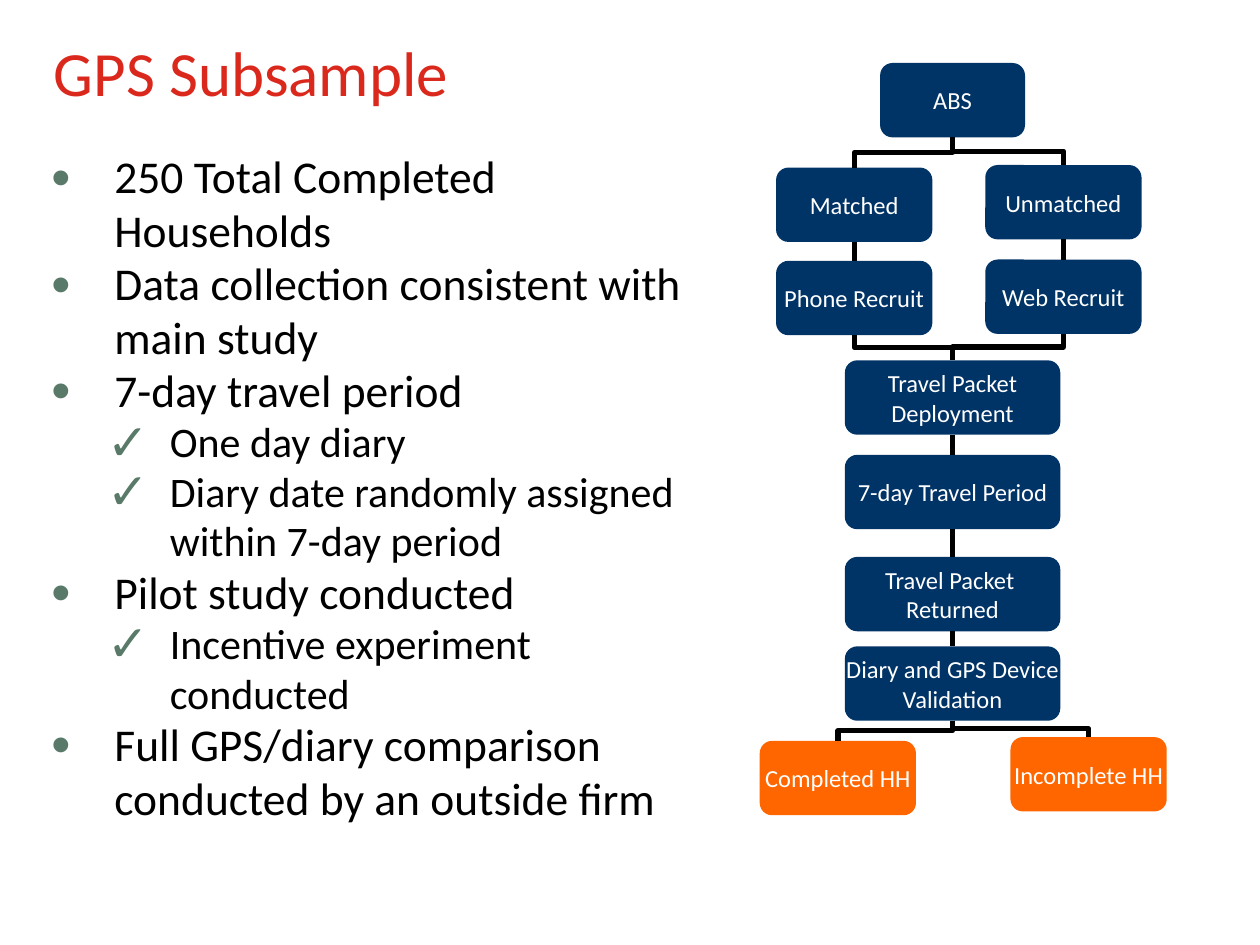
from pptx import Presentation
from pptx.dml.color import RGBColor
from pptx.enum import shapes as es, text as et
from pptx.oxml import parse_xml
from pptx.oxml.ns import nsdecls, qn
from pptx.util import Inches, Pt

NAVY, ORANGE = "003366", "FF6600"
rgb = RGBColor.from_string


def write(frame, lines, size=14, color="000000", align=et.PP_ALIGN.LEFT,
          anchor=et.MSO_ANCHOR.MIDDLE, wrap=True, bullets=None, spacing=None):
    """Fill a frame with lines; bullets gives (mark, indent, size) per line."""
    frame.word_wrap = wrap
    frame.vertical_anchor = anchor
    for i, line in enumerate(lines):
        p = frame.paragraphs[0] if i == 0 else frame.add_paragraph()
        p.alignment = align
        if spacing:
            p.line_spacing = spacing
        line_size = size
        if bullets:
            mark, indent, line_size = bullets[i]
            props = p._p.get_or_add_pPr()
            props.set("marL", str(Inches(indent)))
            props.set("indent", str(Inches(-0.5)))
            for xml in ('<a:buClr {}><a:srgbClr val="597A69"/></a:buClr>',
                        '<a:buSzPct {} val="120000"/>',
                        '<a:buFont {} typeface="Arial"/>',
                        '<a:buChar {} char="' + mark + '"/>'):
                props.append(parse_xml(xml.format(nsdecls("a"))))
        run = p.add_run()
        run.text = line
        run.font.name = "Calibri"
        run.font.size = Pt(line_size)
        run.font.color.rgb = rgb(color)


def link(slide, x1, y1, x2, y2):
    """Join two points downwards, with a vertical-first elbow if x differs."""
    if x1 == x2:
        line = slide.shapes.add_connector(
            es.MSO_CONNECTOR.STRAIGHT, *map(Inches, (x1, y1, x2, y2)))
    else:
        # An elbow starts horizontally, so it is laid out on its side and turned
        mid_x, mid_y = (x1 + x2) / 2, (y1 + y2) / 2
        half_w, half_h = (y2 - y1) / 2, abs(x2 - x1) / 2
        to_right = x2 > x1
        if to_right:
            half_w = -half_w
        line = slide.shapes.add_connector(
            es.MSO_CONNECTOR.ELBOW,
            *map(Inches, (mid_x - half_w, mid_y - half_h, mid_x + half_w, mid_y + half_h)))
        turn = 270 if to_right else 90
        line._element.spPr.find(qn("a:xfrm")).set("rot", str(turn * 60000))
    line.line.color.rgb = rgb("000000")
    line.line.width = Pt(3)
    line._element.spPr.append(parse_xml(f"<a:effectLst {nsdecls('a')}/>"))


prs = Presentation()
prs.slide_width, prs.slide_height = Inches(10), Inches(7.5)
slide = prs.slides.add_slide(prs.slide_layouts[6])

# Title
title = slide.shapes.add_textbox(Inches(0.33), Inches(0.22), Inches(9), Inches(0.7))
write(title.text_frame, ["GPS Subsample"], size=36, color="DA291C")

# Study points: level and wording
points = [
    (1, "250 Total Completed Households"),
    (1, "Data collection consistent with main study"),
    (1, "7-day travel period"),
    (2, "One day diary"),
    (2, "Diary date randomly assigned within 7-day period"),
    (1, "Pilot study conducted"),
    (2, "Incentive experiment conducted"),
    (1, "Full GPS/diary comparison conducted by an outside firm"),
]
levels = {1: ("•", 0.5, 26), 2: ("✓", 0.94, 24)}
body = slide.shapes.add_textbox(Inches(0.31), Inches(1.15), Inches(5.37), Inches(5.97))
write(body.text_frame, [wording for _, wording in points], anchor=et.MSO_ANCHOR.TOP,
      bullets=[levels[level] for level, _ in points], spacing=0.98)

# Flowchart steps: centre x, top, width, fill, lines
LEFT, MIDDLE, RIGHT = 6.78, 7.56, 8.44
STEP_H = 0.59
steps = {
    "abs": (MIDDLE, 0.5, 1.15, NAVY, ["ABS"]),
    "matched": (LEFT, 1.33, 1.24, NAVY, ["Matched"]),
    "unmatched": (RIGHT, 1.31, 1.24, NAVY, ["Unmatched"]),
    "phone": (LEFT, 2.07, 1.24, NAVY, ["Phone Recruit"]),
    "web": (RIGHT, 2.06, 1.24, NAVY, ["Web Recruit"]),
    "deployment": (MIDDLE, 2.86, 1.71, NAVY, ["Travel Packet", "Deployment"]),
    "travel": (MIDDLE, 3.61, 1.71, NAVY, ["7-day Travel Period"]),
    "returned": (MIDDLE, 4.42, 1.71, NAVY, ["Travel Packet ", "Returned"]),
    "validation": (MIDDLE, 5.13, 1.71, NAVY, ["Diary and GPS Device", "Validation"]),
    "completed": (6.65, 5.88, 1.24, ORANGE, ["Completed HH"]),
    "incomplete": (8.64, 5.85, 1.24, ORANGE, ["Incomplete HH"]),
}
for center, top, width, fill, lines in steps.values():
    step = slide.shapes.add_shape(
        es.MSO_SHAPE.FLOWCHART_ALTERNATE_PROCESS,
        *map(Inches, (center - width / 2, top, width, STEP_H)))
    step.shadow.inherit = False
    step.fill.solid()
    step.fill.fore_color.rgb = rgb(fill)
    step.line.fill.background()
    write(step.text_frame, lines, color="FFFFFF", align=et.PP_ALIGN.CENTER, wrap=False)

# Links from the bottom of one step to the top of the next
flow = [
    ("abs", "matched"), ("abs", "unmatched"),
    ("matched", "phone"), ("unmatched", "web"),
    ("phone", "deployment"), ("web", "deployment"),
    ("deployment", "travel"), ("travel", "returned"), ("returned", "validation"),
    ("validation", "completed"), ("validation", "incomplete"),
]
for source, target in flow:
    x1, y1 = steps[source][:2]
    x2, y2 = steps[target][:2]
    link(slide, x1, y1 + STEP_H, x2, y2)

prs.save("out.pptx")
